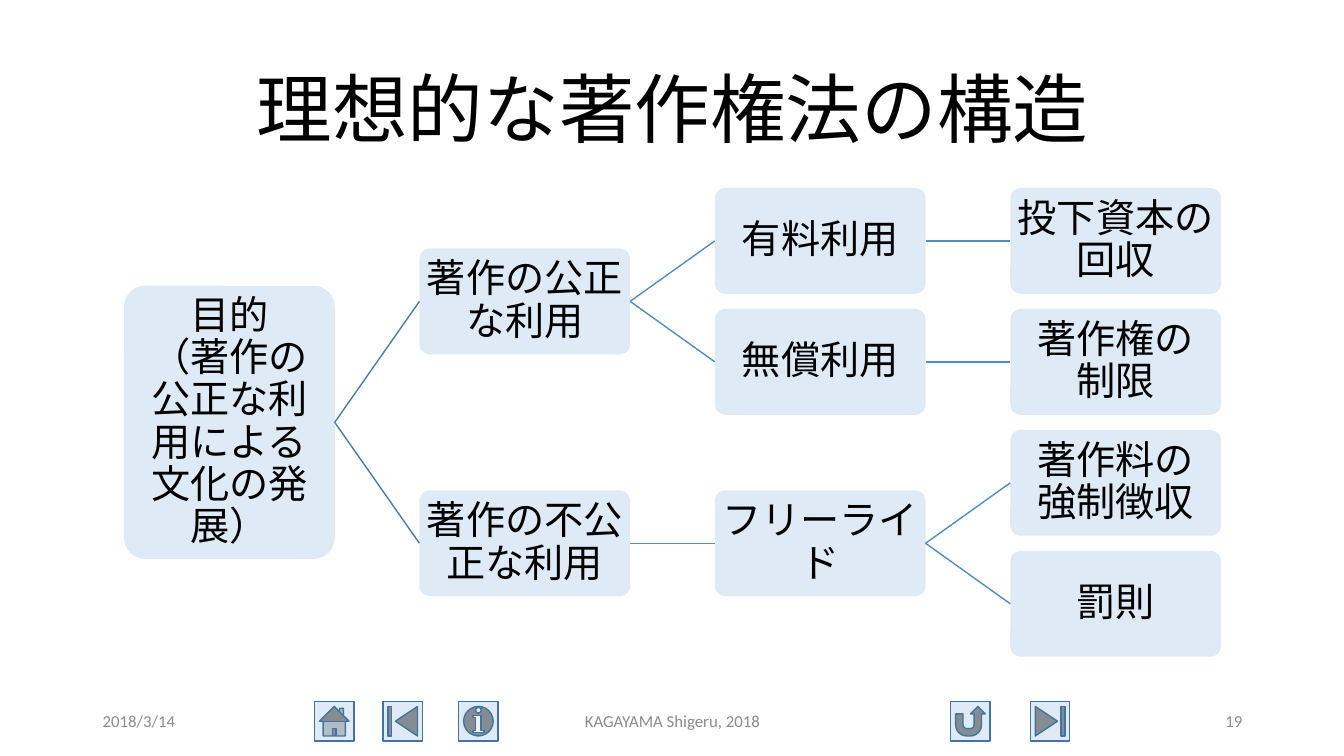
from lxml.etree import SubElement
from pptx import Presentation
from pptx.dml.color import RGBColor
from pptx.enum.lang import MSO_LANGUAGE_ID as LANG
from pptx.enum.shapes import MSO_CONNECTOR, MSO_SHAPE as SHAPE
from pptx.enum.text import MSO_ANCHOR, PP_ALIGN as ALIGN
from pptx.oxml.ns import qn
from pptx.util import Inches, Pt

# Content: each node is (text, children)
TITLE = "理想的な著作権法の構造"
TREE = ("目的\n（著作の公正な利用による文化の発展）", [
    ("著作の公正な利用", [
        ("有料利用", [("投下資本の回収", [])]),
        ("無償利用", [("著作権の\n制限", [])]),
    ]),
    ("著作の不公正な利用", [
        ("フリーライド", [("著作料の\n強制徴収", []), ("罰則", [])]),
    ]),
])
BUTTONS = [
    (SHAPE.ACTION_BUTTON_HOME, 3.12),
    (SHAPE.ACTION_BUTTON_BEGINNING, 3.8),
    (SHAPE.ACTION_BUTTON_INFORMATION, 4.55),
    (SHAPE.ACTION_BUTTON_RETURN, 9.43),
    (SHAPE.ACTION_BUTTON_END, 10.22),
]
FOOTERS = [
    ("2018/3/14", 0.92, 3, ALIGN.LEFT),
    ("KAGAYAMA Shigeru, 2018", 4.42, 4.5, ALIGN.CENTER),
    ("19", 9.42, 3, ALIGN.RIGHT),
]
COLORS = {"fill": "DEEBF7", "button_line": "43739E", "root_link": "497CAB",
          "link": "538DC1", "text": "000000", "footer": "8C8C8C"}

# Tree layout in inches
LEFT, COLUMN_STEP = 1.23, 2.93
FIRST_ROW, ROW_STEP = 2.39, 1.2
BOX_WIDTH, BOX_HEIGHT, ROOT_HEIGHT = 2.09, 1.05, 2.71

deck = Presentation()
deck.slide_width, deck.slide_height = Inches(13.33), Inches(7.5)
page = deck.slides.add_slide(deck.slide_layouts[6])


def color(name):
    return RGBColor.from_string(COLORS[name])


def write(shape, text, size, color_name="text", align=ALIGN.CENTER, spacing=0.9, inset=None):
    frame = shape.text_frame
    frame.word_wrap = True
    frame.vertical_anchor = MSO_ANCHOR.MIDDLE
    if inset is not None:
        for side in ("left", "top", "right", "bottom"):
            setattr(frame, f"margin_{side}", Inches(inset))
    para = frame.paragraphs[0]
    para.text = text
    para.alignment, para.line_spacing = align, spacing
    look = {"name": "Calibri", "size": Pt(size), "language_id": LANG.JAPANESE}
    for span in para.runs:
        for key, value in look.items():
            setattr(span.font, key, value)
        span.font.color.rgb = color(color_name)


def add_filled(kind, left, top, width, height):
    shape = page.shapes.add_shape(kind, *map(Inches, (left, top, width, height)))
    shape.shadow.inherit = False
    shape.fill.solid()
    shape.fill.fore_color.rgb = color("fill")
    return shape


def add_link(parent, child, color_name):
    link = page.shapes.add_connector(MSO_CONNECTOR.STRAIGHT, 0, 0, 0, 0)
    link.begin_connect(parent, 3)
    link.end_connect(child, 1)
    link.line.color.rgb = color(color_name)
    link.line.width = Pt(1)
    SubElement(link._element.spPr, qn("a:effectLst"))


def add_node(node, rows, level=0):
    """Draw a node centred on its children; return its box and middle height."""
    text, children = node
    branches = [add_node(child, rows, level + 1) for child in children]
    if branches:
        middle = sum(height for _, height in branches) / len(branches)
    else:
        middle = FIRST_ROW + ROW_STEP * next(rows)
    height = BOX_HEIGHT if level else ROOT_HEIGHT
    box = add_filled(SHAPE.ROUNDED_RECTANGLE, LEFT + level * COLUMN_STEP,
                     middle - height / 2, BOX_WIDTH, height)
    box.adjustments[0] = 0.1
    box.line.fill.background()
    write(box, text, 28, inset=0.02)
    for child_box, _ in branches:
        add_link(box, child_box, "link" if level else "root_link")
    return box, middle


# Navigation buttons
for kind, left in BUTTONS:
    button = add_filled(kind, left, 6.96, 0.39, 0.39)
    button.line.color.rgb = color("button_line")
    button.line.width = Pt(1)

# Title
title = page.shapes.add_textbox(*map(Inches, (0.92, 0.4, 11.5, 1.45)))
write(title, TITLE, 54)

# Tree
add_node(TREE, iter(range(4)))

# Footer
for text, left, width, align in FOOTERS:
    footer = page.shapes.add_textbox(*map(Inches, (left, 6.95, width, 0.4)))
    write(footer, text, 12, "footer", align, 1.0)

deck.save("out.pptx")
